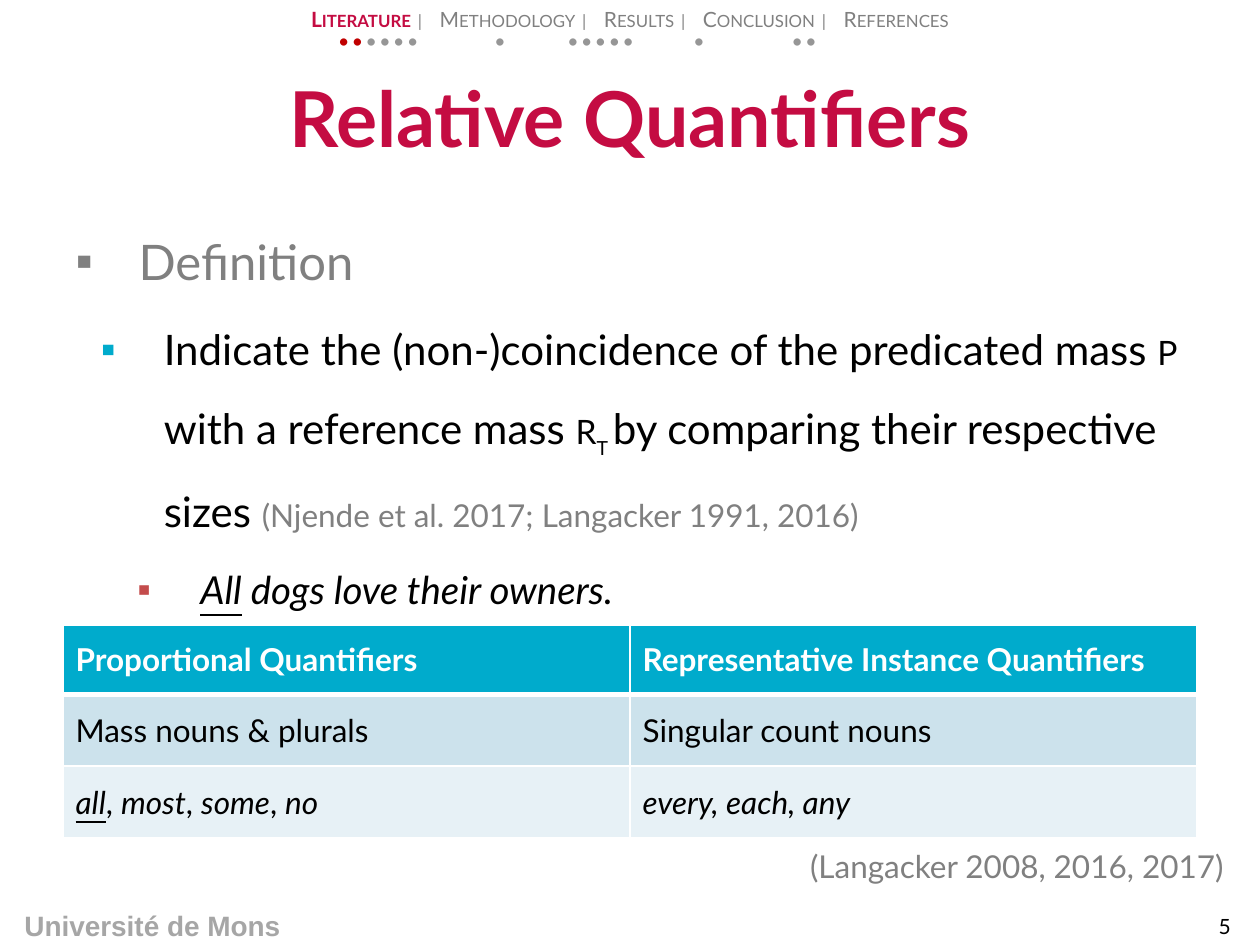
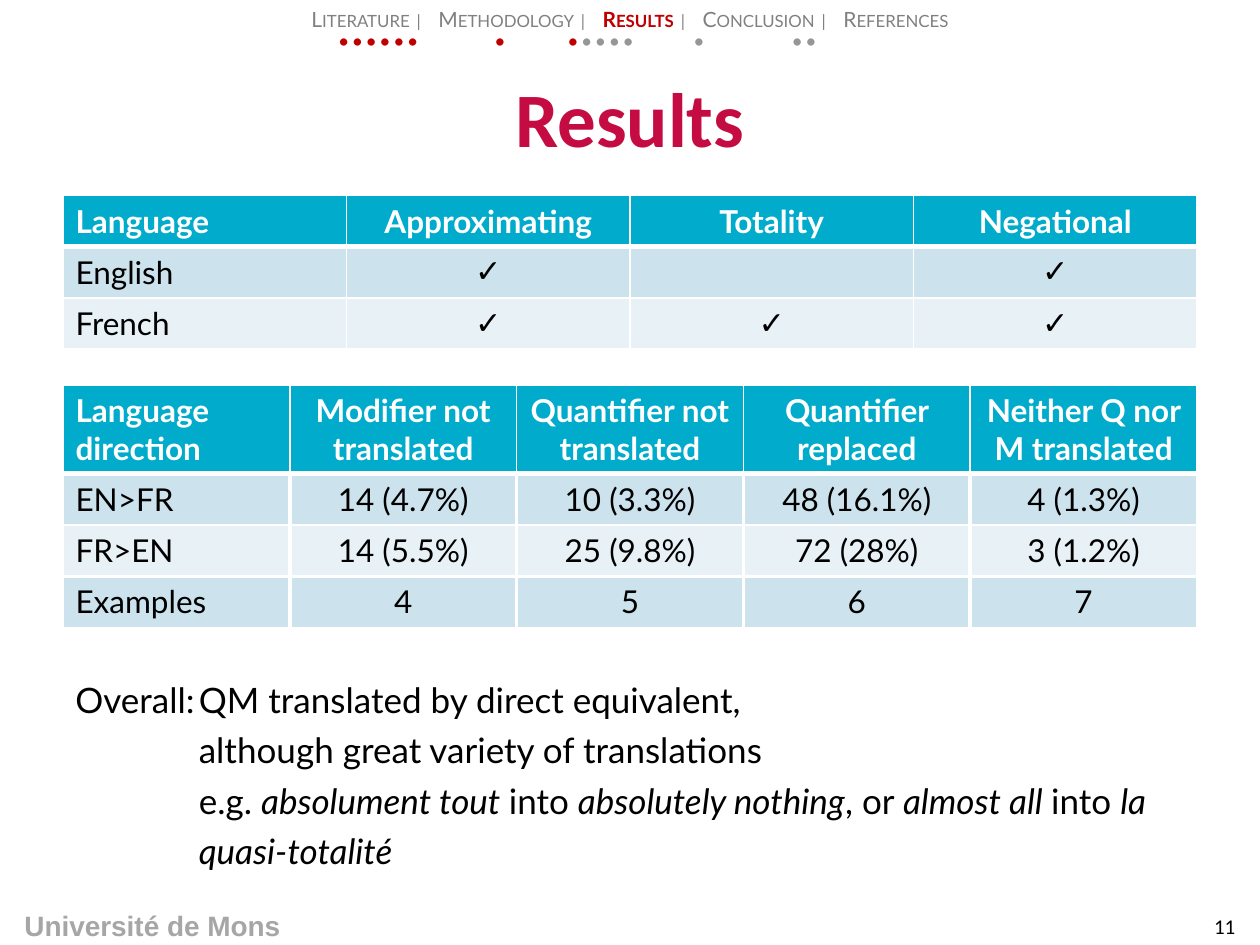
from dataclasses import dataclass, field
from typing import NamedTuple

from lxml import etree
from pptx import Presentation
from pptx.dml.color import RGBColor
from pptx.enum.text import MSO_ANCHOR, MSO_AUTO_SIZE, PP_ALIGN
from pptx.oxml.ns import qn
from pptx.util import Inches, Pt

LEFT, MID, RIGHT = PP_ALIGN.LEFT, PP_ALIGN.CENTER, PP_ALIGN.RIGHT
TOP, CENTER = MSO_ANCHOR.TOP, MSO_ANCHOR.MIDDLE
FIXED = MSO_AUTO_SIZE.NONE

WIDE, HIGH = Inches(10), Inches(7.5)
COL, ROW = WIDE // 100, HIGH // 75

HEX = {
    "brand": "C40C42", "red": "C00000", "grey": "808080", "pale": "969696",
    "foot": "A6A6A6", "black": "000000", "white": "FFFFFF", "teal": "00ABCC",
    "rust": "C44C4C", "band": "CCE2EC", "light": "E7F1F6",
}
RAW = ("cap", "baseline", "spc")

PLAIN = {"name": "Lato", "color": "black"}
HEAD = {"name": "Lato", "size": Pt(44), "bold": True, "color": "brand"}
SMALL = {"name": "Lato", "size": Pt(12), "cap": "small", "color": "grey"}
CELL = PLAIN | {"size": Pt(18)}
CITE = {"size": Pt(18), "color": "grey"}
TICK = {"name": "Calibri", "bold": True}
CAPS = {"cap": "small"}
SLANT = {"italic": True}
LINED = SLANT | {"underline": True}

PARTS = ("Literature", "Methodology", "Results", "Conclusion", "References")
COUNTS = (6, 1, 5, 1, 2)
STOPS = (1.24, 1.82, 2.82, 3.6)


class Box(NamedTuple):
    left: float
    top: float
    wide: float
    high: float

    def span(self) -> tuple:
        return (int(self.left * COL), int(self.top * ROW),
                int(self.wide * COL), int(self.high * ROW))


class Bit(NamedTuple):
    text: str
    form: dict = {}


@dataclass
class Para:
    bits: list
    form: dict = field(default_factory=dict)
    hang: tuple = ()
    mark: str = ""
    stops: tuple = ()


@dataclass
class Grid:
    top: float
    rows: tuple
    cells: list
    side: PP_ALIGN = MID
    hold: MSO_ANCHOR = CENTER
    inner: float = 1
    heavy: tuple = (3,)


def style(run, form: dict) -> None:
    for key, val in form.items():
        if key == "color":
            run.font.color.rgb = RGBColor.from_string(HEX[val])
        elif key in RAW:
            run._r.get_or_add_rPr().set(key, val)
        else:
            setattr(run.font, key, val)


def add(root, tag: str, **attrs: str):
    return etree.SubElement(root, qn(tag), attrs)


def shape_para(line, para: Para) -> None:
    props = line._p.get_or_add_pPr()
    if para.hang:
        start, first = para.hang
        props.set("marL", str(Inches(start)))
        props.set("indent", str(Inches(first)))
    if para.mark:
        add(add(props, "a:buClr"), "a:srgbClr", val=HEX[para.mark])
        add(props, "a:buFont", typeface="Arial")
        add(props, "a:buChar", char="▪")
    if para.stops:
        tabs = add(props, "a:tabLst")
        for stop in para.stops:
            add(tabs, "a:tab", pos=str(Inches(stop)), algn="l")
    for key, val in para.form.items():
        setattr(line, key, val)


def pour(frame, paras: list[Para], base: dict) -> None:
    for spot, para in enumerate(paras):
        line = frame.add_paragraph() if spot else frame.paragraphs[0]
        shape_para(line, para)
        for bit in para.bits:
            run = line.add_run()
            run.text = bit.text
            style(run, base | bit.form)


def put(shape, box: Box, paras: list[Para], base: dict,
        hold: MSO_ANCHOR = TOP) -> None:
    shape.left, shape.top, shape.width, shape.height = box.span()
    frame = shape.text_frame
    for key, val in {"word_wrap": True, "auto_size": FIXED,
                     "vertical_anchor": hold}.items():
        setattr(frame, key, val)
    pour(frame, paras, base)


def write(slide, box: Box, paras: list[Para], base: dict,
          hold: MSO_ANCHOR = TOP) -> None:
    put(slide.shapes.add_textbox(*box.span()), box, paras, base, hold)


def edge(cell, sides: dict[str, float]) -> None:
    props = cell._tc.get_or_add_tcPr()
    for spot, (side, size) in enumerate(sides.items()):
        line = etree.Element(qn(f"a:ln{side}"), w=str(Pt(size)))
        add(add(line, "a:solidFill"), "a:srgbClr", val=HEX["white"])
        props.insert(spot, line)


def draw_grid(slide, grid: Grid) -> None:
    count, wide = len(grid.rows), len(grid.cells[0])
    box = Box(5, grid.top, 90, sum(grid.rows))
    table = slide.shapes.add_table(count, wide, *box.span()).table
    rules = {0: 1, count: 1} | dict(enumerate(grid.heavy, 1))
    for col in table.columns:
        col.width = 90 * COL // wide
    for down, high in enumerate(grid.rows):
        table.rows[down].height = int(high * ROW)
        tint = "teal" if down == 0 else "band" if down % 2 else "light"
        base = CELL | ({"color": "white", "bold": True} if down == 0 else {})
        inner = grid.inner if down else 1
        for across, text in enumerate(grid.cells[down]):
            cell = table.cell(down, across)
            cell.vertical_anchor = grid.hold
            cell.fill.solid()
            cell.fill.fore_color.rgb = RGBColor.from_string(HEX[tint])
            edge(cell, {"L": inner if across else 1,
                        "R": inner if across < wide - 1 else 1,
                        "T": rules.get(down, 1),
                        "B": rules.get(down + 1, 1)})
            if text:
                bits = [Bit(text)] if isinstance(text, str) else text
                side = grid.side if across else LEFT
                pour(cell.text_frame, [Para(bits, {"alignment": side})], base)


def draw_nav(slide, part: str, tint: str, seen: int) -> None:
    bits = []
    for name in PARTS:
        if bits:
            bits.append(Bit(" | ", {"spc": "150"}))
        live = {"bold": True, "color": tint} if name == part else {}
        bits.append(Bit(name, live))
    flat = {"space_before": Pt(0)}
    write(slide, Box(0, 0, 100, 2.5), [Para(bits, flat | {"alignment": MID})],
          SMALL)
    trail = "\t".join(" ".join("•" * count) for count in COUNTS)
    cut = [spot for spot, sign in enumerate(trail) if sign == "•"][seen]
    dots = [Bit(trail[:cut], {"color": "red"}),
            Bit(trail[cut:], {"color": "pale"})]
    write(slide, Box(25.9, 1.6, 58.1, 4.3), [Para(dots, flat, stops=STOPS)],
          SMALL | {"bold": True})


def start(deck, plan: int, title: str, font: str, page: str, part: str,
          tint: str, seen: int):
    slide = deck.slides.add_slide(deck.slide_layouts[plan])
    face = {"name": font}
    mid = {"alignment": MID}
    write(slide, Box(-0.1, 71.6, 24.4, 3.7),
          [Para([Bit("Université de Mons")], mid)],
          {"name": "Arial", "size": Pt(16), "bold": True, "color": "foot"})
    put(slide.shapes.title, Box(5, 3, 90, 12.5), [Para([Bit(title)], mid)],
        HEAD | face, CENTER)
    write(slide, Box(94.4, 72, 5.6, 3), [Para([Bit(page)], mid)],
          PLAIN | face | {"size": Pt(12)}, CENTER)
    draw_nav(slide, part, tint, seen)
    return slide


def build_terms(deck) -> None:
    slide = start(deck, 1, "Relative Quantifiers", "Lato", "5",
                  "Literature", "brand", 2)
    loose = {"line_spacing": 1.5}
    points = [
        Para([Bit("Definition", {"size": Pt(28), "color": "grey"})],
             loose | {"space_before": Pt(0)}, (0.5, -0.5), "grey"),
        Para([Bit("Indicate the (non-)coincidence of the predicated mass "),
              Bit("p ", CAPS), Bit("with a reference mass "), Bit("r", CAPS),
              Bit("t ", CAPS | {"baseline": "-25000"}),
              Bit("by comparing their respective sizes "),
              Bit("(Njende et al. 2017; Langacker 1991, 2016)", CITE)],
             loose | {"level": 1, "space_before": Pt(4.8)},
             (0.7, -0.5), "teal"),
        Para([Bit("All", LINED | {"size": Pt(22)}),
              Bit(" dogs love their owners.", SLANT | {"size": Pt(22)})],
             loose | {"level": 2, "space_before": Pt(4.4)},
             (0.99, -0.5), "rust"),
    ]
    put(slide.placeholders[1], Box(5, 15.5, 92.2, 51.5), points,
        PLAIN | {"size": Pt(24)})
    words = [Bit("all", LINED), Bit(", "), Bit("most", SLANT), Bit(", "),
             Bit("some", SLANT), Bit(", "), Bit("no", SLANT)]
    draw_grid(slide, Grid(49.6, (5.5, 5.7, 5.7), [
        ("Proportional Quantifiers", "Representative Instance Quantifiers"),
        ("Mass nouns & plurals", "Singular count nouns"),
        (words, [Bit("every, each, any", SLANT)]),
    ], side=LEFT))
    write(slide, Box(48, 65.2, 50.1, 4.9),
          [Para([Bit("(Langacker 2008, 2016, 2017)")],
                loose | {"alignment": RIGHT})], PLAIN | CITE)


def build_finds(deck) -> None:
    slide = start(deck, 5, "Results", "Calibri", "11", "Results", "red", 8)
    tick = [Bit("✓", TICK)]
    draw_grid(slide, Grid(15.5, (4.07,) * 3, [
        ("Language", "Approximating", "Totality", "Negational"),
        ("English", tick, "", tick),
        ("French", tick, tick, tick),
    ]))
    draw_grid(slide, Grid(30.6, (6.9,) + (4.07,) * 3, [
        ("Language direction", "Modifier not translated",
         "Quantifier not translated", "Quantifier replaced",
         "Neither Q nor M translated"),
        ("EN>FR", "14 (4.7%)", "10 (3.3%)", "48 (16.1%)", "4 (1.3%)"),
        ("FR>EN", "14 (5.5%)", "25 (9.8%)", "72 (28%)", "3 (1.2%)"),
        ("Examples", "4", "5", "6", "7"),
    ], hold=TOP, inner=2.25, heavy=(3, 1, 2.25)))
    lines = [
        [Bit("Overall:\tQM translated by direct equivalent,")],
        [Bit("\talthough great variety of translations")],
        [Bit("\te.g. "), Bit("absolument tout ", SLANT), Bit("into "),
         Bit("absolutely nothing", SLANT), Bit(", or "),
         Bit("almost all ", SLANT), Bit("into "),
         Bit("la quasi-totalité", SLANT)],
    ]
    write(slide, Box(5, 52.7, 90, 16.7),
          [Para(bits, {"line_spacing": 1.2}, (0.98, -0.98)) for bits in lines],
          PLAIN | {"size": Pt(20)})


def main() -> None:
    deck = Presentation()
    deck.slide_width, deck.slide_height = WIDE, HIGH
    build_terms(deck)
    build_finds(deck)
    deck.save("out.pptx")


if __name__ == "__main__":
    main()
